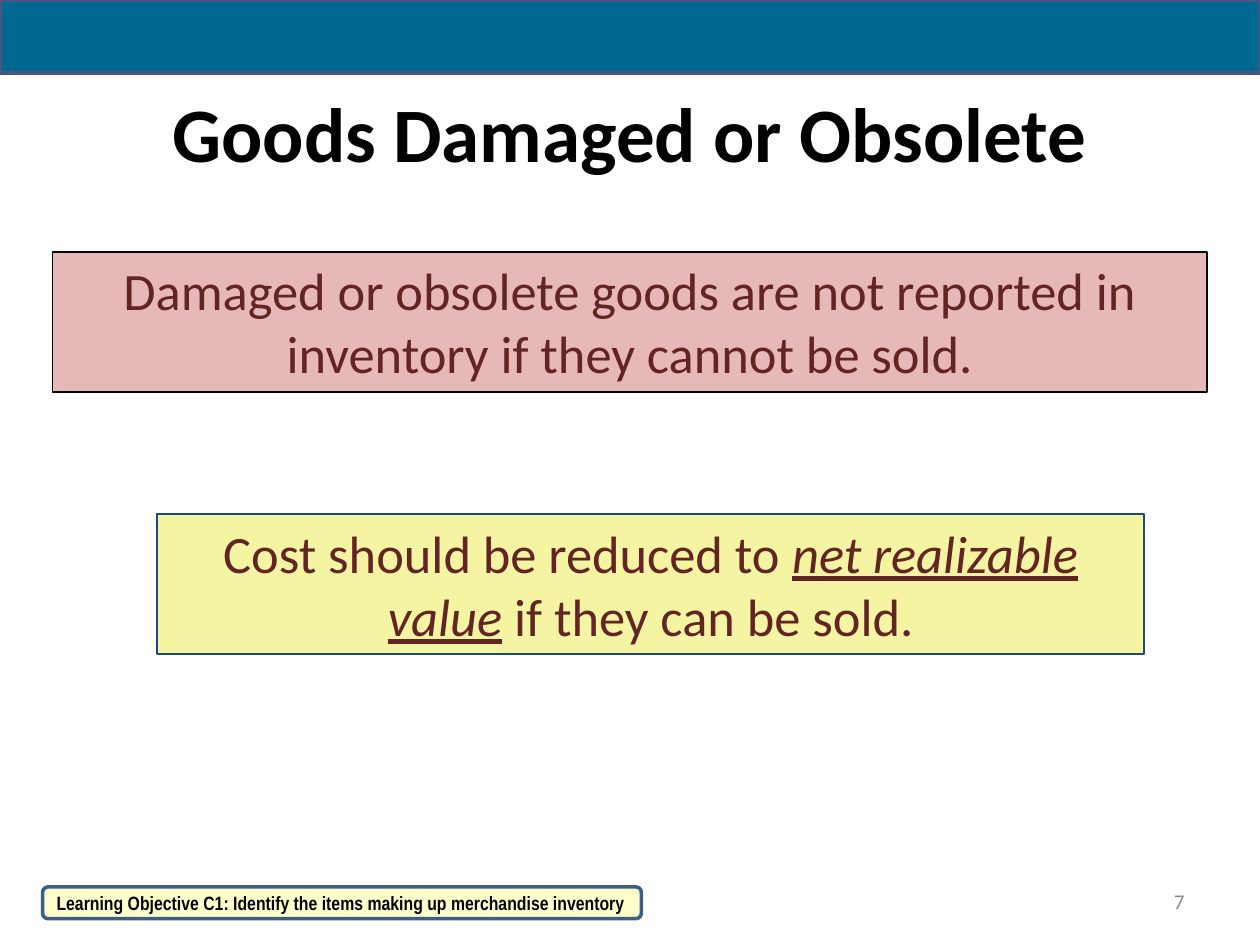
"""Build the slide on damaged or obsolete goods."""
from dataclasses import dataclass
from typing import Optional

from pptx import Presentation
from pptx import util as u
from pptx.dml.color import RGBColor
from pptx.enum import shapes, text

COLORS = {
    "bar": "006991",
    "bar_line": "475785",
    "rose": "E6B9B8",
    "yellow": "F4F4A3",
    "cream": "FFFFCC",
    "black": "000000",
    "navy": "1F497D",
    "blue": "3A5F8C",
    "maroon": "632523",
    "gray": "898989",
}


@dataclass(frozen=True)
class Run:
    """A stretch of text with its emphasis."""
    words: str
    italic: bool = False
    underline: bool = False


@dataclass(frozen=True)
class Style:
    """The type used in a box."""
    size: float
    color: str
    font: str = "Calibri"
    bold: bool = False
    align: text.PP_ALIGN = text.PP_ALIGN.CENTER
    anchor: text.MSO_ANCHOR = text.MSO_ANCHOR.MIDDLE


@dataclass(frozen=True)
class Box:
    """A rectangle in centimetres; without a fill it is a text box."""
    left: float
    top: float
    width: float
    height: float
    runs: tuple[Run, ...] = ()
    style: Optional[Style] = None
    fill: Optional[str] = None
    line: str = "black"
    line_width: float = 1
    kind: shapes.MSO_SHAPE = shapes.MSO_SHAPE.RECTANGLE


TITLE = Style(44, "black", bold=True)
STATEMENT = Style(30, "maroon", anchor=text.MSO_ANCHOR.TOP)
NUMBER = Style(12, "gray", align=text.PP_ALIGN.RIGHT)
OBJECTIVE = Style(11, "black", "Arial Narrow", True, text.PP_ALIGN.LEFT)

BOXES = (
    Box(1.27, 1.07, 22.86, 3.18, (Run("Goods Damaged or Obsolete"),), TITLE),
    Box(1.06, 5.08, 23.28, 2.82,
        (Run("Damaged or obsolete goods are not reported in inventory if they cannot be sold."),),
        STATEMENT, "rose"),
    Box(3.17, 10.37, 19.9, 2.82,
        (Run("Cost should be reduced to "),
         Run("net realizable value", italic=True, underline=True),
         Run(" ", italic=True),
         Run("if they can be sold.")),
        STATEMENT, "yellow", "navy"),
    Box(0, 0, 25.4, 1.47, fill="bar", line="bar_line", line_width=2.25),
    Box(18.2, 17.65, 5.93, 1.02, (Run("7"),), NUMBER),
    Box(0.86, 17.88, 12.07, 0.64,
        (Run("Learning Objective C1: Identify the items making up merchandise inventory"),),
        OBJECTIVE, "cream", "blue", 2, shapes.MSO_SHAPE.ROUNDED_RECTANGLE),
)


def color(name: str) -> RGBColor:
    """Look up a colour by name."""
    return RGBColor.from_string(COLORS[name])


def write(shape, runs: tuple[Run, ...], style: Style) -> None:
    """Fill a shape with one styled paragraph."""
    frame = shape.text_frame
    frame.word_wrap = True
    frame.vertical_anchor = style.anchor
    paragraph = frame.paragraphs[0]
    paragraph.alignment = style.align
    for item in runs:
        run = paragraph.add_run()
        run.text = item.words
        font = run.font
        font.name = style.font
        font.size = u.Pt(style.size)
        font.bold = style.bold
        font.italic = item.italic
        font.underline = item.underline
        font.color.rgb = color(style.color)


def draw(slide, box: Box) -> None:
    """Draw one box with its text."""
    place = [u.Cm(length) for length in (box.left, box.top, box.width, box.height)]
    if box.fill:
        shape = slide.shapes.add_shape(box.kind, *place)
        shape.shadow.inherit = False
        shape.fill.solid()
        shape.fill.fore_color.rgb = color(box.fill)
        shape.line.color.rgb = color(box.line)
        shape.line.width = u.Pt(box.line_width)
    else:
        shape = slide.shapes.add_textbox(*place)
    if box.style:
        write(shape, box.runs, box.style)


def main() -> None:
    """Build and save the presentation."""
    presentation = Presentation()
    presentation.slide_width = u.Cm(25.4)
    presentation.slide_height = u.Cm(19.05)
    slide = presentation.slides.add_slide(presentation.slide_layouts[6])
    for box in BOXES:
        draw(slide, box)
    presentation.save("out.pptx")


if __name__ == "__main__":
    main()
